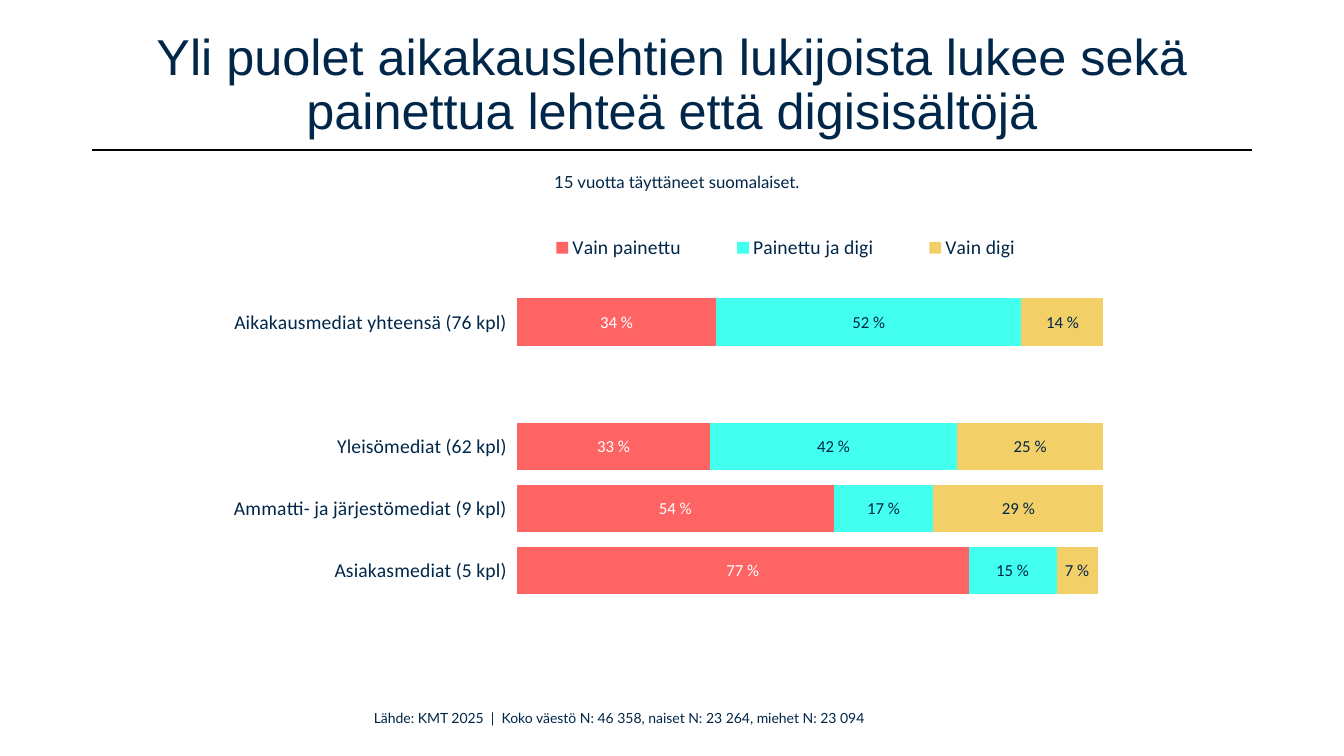
from lxml.etree import SubElement
from pptx import Presentation
from pptx.chart.data import CategoryChartData
from pptx.dml.color import RGBColor
from pptx.enum.chart import XL_CHART_TYPE, XL_LABEL_POSITION, XL_LEGEND_POSITION, XL_TICK_LABEL_POSITION, XL_TICK_MARK
from pptx.enum.shapes import MSO_CONNECTOR
from pptx.enum.text import MSO_ANCHOR, MSO_AUTO_SIZE, PP_ALIGN
from pptx.oxml.ns import qn
from pptx.util import Pt

TITLE = "Yli puolet aikakauslehtien lukijoista lukee sekä painettua lehteä että digisisältöjä"
AUDIENCE = "15 vuotta täyttäneet suomalaiset."
SOURCE = "Lähde: KMT 2025  |  Koko väestö N: 46 358, naiset N: 23 264, miehet N: 23 094"
MEDIA_GROUPS = [
    "Asiakasmediat (5 kpl)",
    "Ammatti- ja järjestömediat (9 kpl)",
    "Yleisömediat (62 kpl)",
    "",
    "Aikakausmediat yhteensä (76 kpl)",
]
READING_MODES = [
    ("Vain painettu", (77, 54, 33, None, 34), "red", "white"),
    ("Painettu ja digi", (15, 17, 42, None, 52), "turquoise", "navy"),
    ("Vain digi", (7, 29, 25, None, 14), "yellow", "navy"),
]
COLORS = {
    "navy": "002649",
    "black": "000000",
    "white": "FFFFFF",
    "red": "FF6464",
    "turquoise": "43FFED",
    "yellow": "F3CF67",
}
EMU_PER_PX = 914400 / 100.8


def px(*lengths):
    return [round(length * EMU_PER_PX) for length in lengths]


def color(name):
    return RGBColor.from_string(COLORS[name])


def style(font, size, face, tint="navy"):
    font.size = Pt(size)
    font.name = face
    font.color.rgb = color(tint)


def add_caption(slide, box, wording, size):
    caption = slide.shapes.add_textbox(*px(*box)).text_frame
    caption.word_wrap = True
    caption.auto_size = MSO_AUTO_SIZE.SHAPE_TO_FIT_TEXT
    line = caption.paragraphs[0]
    line.text = wording
    line.alignment = PP_ALIGN.CENTER
    style(line.font, size, "Lato")


def place(parent, index, fractions, inner=False):
    for old in parent.findall(qn("c:layout")):
        parent.remove(old)
    layout = SubElement(parent, qn("c:layout"))
    manual = SubElement(layout, qn("c:manualLayout"))
    settings = [("layoutTarget", "inner")] if inner else []
    settings += [("xMode", "edge"), ("yMode", "edge"), *zip("xywh", fractions)]
    for tag, setting in settings:
        SubElement(manual, qn(f"c:{tag}")).set("val", str(setting))
    parent.insert(index, layout)


def add_title(slide):
    title = slide.shapes.title
    title.left, title.top, title.width, title.height = px(92, 32, 1160, 108)
    frame = title.text_frame
    frame.auto_size = MSO_AUTO_SIZE.NONE
    frame.vertical_anchor = MSO_ANCHOR.MIDDLE
    heading = frame.paragraphs[0]
    heading.text = TITLE
    heading.alignment = PP_ALIGN.CENTER
    heading.line_spacing = 0.9
    style(heading.font, 36, "Arial")


def add_rule(slide):
    rule = slide.shapes.add_connector(MSO_CONNECTOR.STRAIGHT, *px(92, 150, 1252, 150))
    rule.line.color.rgb = color("black")
    rule.line.width = Pt(1)
    SubElement(rule._element.spPr, qn("a:effectLst"))


def add_reading_chart(slide):
    shares = CategoryChartData()
    shares.categories = MEDIA_GROUPS
    for mode, percents, _, _ in READING_MODES:
        shares.add_series(mode, percents)
    chart = slide.shapes.add_chart(
        XL_CHART_TYPE.BAR_STACKED, *px(155, 225, 978, 414), shares
    ).chart
    chart.has_title = False
    style(chart.font, 12, "Lato", "black")

    chart.has_legend = True
    legend = chart.legend
    legend.position = XL_LEGEND_POSITION.TOP
    legend.include_in_layout = False
    style(legend.font, 14, "Calibri")
    place(legend._element, 1, (0.36, 0.01, 0.57, 0.09))
    place(chart._chartSpace.chart.plotArea, 0, (0.37, 0.16, 0.6, 0.75), inner=True)

    groups = chart.category_axis
    groups.major_tick_mark = XL_TICK_MARK.NONE
    groups.tick_label_position = XL_TICK_LABEL_POSITION.LOW
    groups.format.line.fill.background()
    style(groups.tick_labels.font, 14, "Calibri")
    percent = chart.value_axis
    percent.minimum_scale, percent.maximum_scale, percent.major_unit = 0, 100.01, 10
    percent.has_major_gridlines = False
    percent.visible = False

    bars = chart.plots[0]
    bars.gap_width, bars.overlap = 30, 100
    bars.vary_by_categories = False
    for series, (_, _, fill, ink) in zip(bars.series, READING_MODES):
        series.format.fill.solid()
        series.format.fill.fore_color.rgb = color(fill)
        labels = series.data_labels
        labels.show_value = True
        labels.position = XL_LABEL_POSITION.CENTER
        labels.number_format = '0" %"'
        labels.number_format_is_linked = False
        style(labels.font, 12, "Calibri", ink)


def main():
    deck = Presentation()
    deck.slide_width, deck.slide_height = px(1344, 756)
    slide = deck.slides.add_slide(deck.slide_layouts[5])
    add_rule(slide)
    add_caption(slide, (283, 705, 672, 27), SOURCE, 10)
    add_title(slide)
    add_caption(slide, (126, 167, 1102, 30), AUDIENCE, 12)
    add_reading_chart(slide)
    deck.save("out.pptx")


if __name__ == "__main__":
    main()
